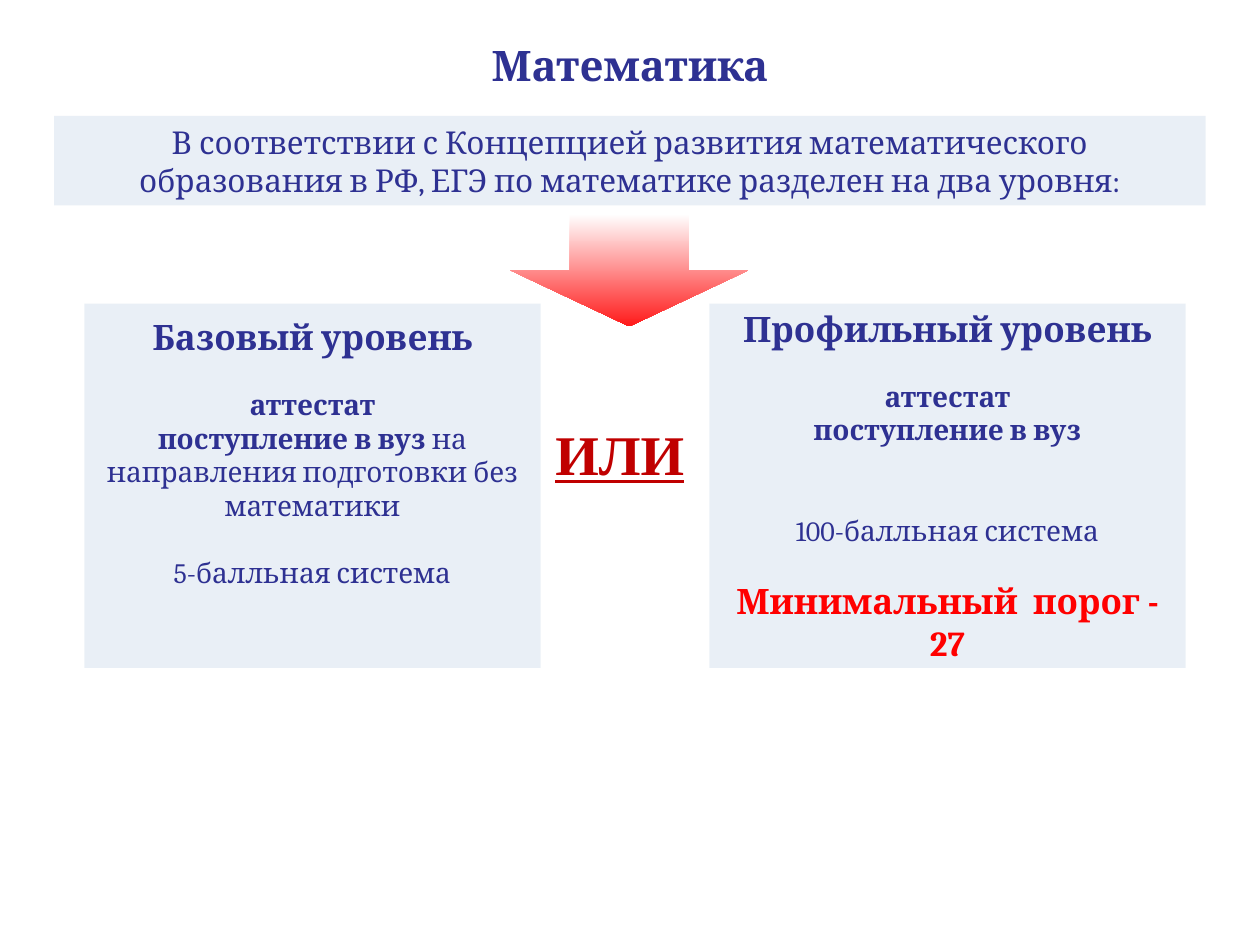
from dataclasses import dataclass
from lxml import etree
from pptx import Presentation
from pptx.dml.color import RGBColor as RGB
from pptx.enum.shapes import MSO_SHAPE as SHAPE
from pptx.enum.text import MSO_ANCHOR as ANCHOR, MSO_AUTO_SIZE as AUTO, PP_ALIGN as ALIGN
from pptx.oxml import parse_xml
from pptx.oxml.ns import nsdecls, qn
from pptx.util import Inches, Pt


@dataclass(frozen=True)
class Theme:
    serif: str = "Cambria"
    accent_font: str = "Times New Roman"
    navy: RGB = RGB.from_string("2E3192")
    panel: RGB = RGB.from_string("B9CDE5")
    white: RGB = RGB.from_string("FFFFFF")
    red: RGB = RGB.from_string("FF0000")
    arrow_red: RGB = RGB.from_string("FF1A1A")
    dark_red: RGB = RGB.from_string("C00000")
    panel_alpha: int = 31
    title: int = 24
    heading: int = 20
    intro: int = 18
    body: int = 16
    choice: int = 32


T = Theme()


@dataclass(frozen=True)
class Line:
    text: str
    size: int = T.body
    bold: bool = False
    color: RGB = T.navy
    font: str = T.serif
    before: int = 0
    plain_tail: str = ""


def write_lines(tf, lines):
    tf.word_wrap = True
    for i, line in enumerate(lines):
        p = tf.paragraphs[0] if i == 0 else tf.add_paragraph()
        p.alignment = ALIGN.CENTER
        if line.before:
            p.space_before = Pt(line.before)
        font = p.font
        font.name, font.size, font.bold = line.font, Pt(line.size), line.bold
        font.color.rgb = line.color
        p.add_run().text = line.text
        if line.plain_tail:
            r = p.add_run()
            r.text = line.plain_tail
            r.font.bold = False


def add_title(slide, text, left, top, width, height):
    sp = slide.shapes.title
    sp.left, sp.top, sp.width, sp.height = map(Inches, (left, top, width, height))
    tf = sp.text_frame
    tf.auto_size = AUTO.NONE
    write_lines(tf, [Line(text, T.title, bold=True)])
    rPr = tf.paragraphs[0].runs[0].font._element
    rPr.append(parse_xml(
        f'<a:effectLst {nsdecls("a")}>'
        '<a:outerShdw blurRad="38100" dist="38100" dir="5400000">'
        '<a:srgbClr val="000000"><a:alpha val="43000"/></a:srgbClr>'
        '</a:outerShdw></a:effectLst>'))


def add_plain_shape(slide, kind, left, top, width, height):
    sp = slide.shapes.add_shape(kind, *map(Inches, (left, top, width, height)))
    sp.shadow.inherit = False
    sp.line.fill.background()
    return sp


def add_panel(slide, left, top, width, height, lines, bottom_inset=0.05):
    sp = add_plain_shape(slide, SHAPE.RECTANGLE, left, top, width, height)
    sp.fill.solid()
    sp.fill.fore_color.rgb = T.panel
    clr = sp._element.spPr.find(qn("a:solidFill"))[0]
    etree.SubElement(clr, qn("a:alpha")).set("val", str(T.panel_alpha * 1000))
    tf = sp.text_frame
    tf.vertical_anchor = ANCHOR.MIDDLE
    tf.margin_bottom = Inches(bottom_inset)
    write_lines(tf, lines)


def add_arrow(slide, left, top, width, height):
    sp = add_plain_shape(slide, SHAPE.DOWN_ARROW, left, top, width, height)
    sp.fill.gradient()
    sp.fill.gradient_angle = 270
    for stop, color in zip(sp.fill.gradient_stops, (T.white, T.arrow_red)):
        stop.color.rgb = color


def add_choice(slide, text, left, top, width, height):
    tf = slide.shapes.add_textbox(*map(Inches, (left, top, width, height))).text_frame
    write_lines(tf, [Line(text, T.choice, True, T.dark_red, T.accent_font)])
    tf.paragraphs[0].font.underline = True


def main():
    prs = Presentation()
    prs.slide_width, prs.slide_height = Inches(10), Inches(7.5)
    slide = prs.slides.add_slide(prs.slide_layouts[5])

    add_title(slide, "Математика", 0.43, 0.26, 9.14, 0.5)
    add_panel(slide, 0.67, 2.41, 3.62, 2.89, [
        Line("Базовый уровень", T.heading, bold=True),
        Line("аттестат", bold=True, before=17),
        Line("поступление в вуз ", bold=True,
             plain_tail="на направления подготовки без математики"),
        Line("5-балльная система", before=19),
    ], bottom_inset=0.58)
    add_panel(slide, 5.63, 2.41, 3.78, 2.89, [
        Line("Профильный уровень", T.heading, bold=True),
        Line("аттестат", bold=True, before=17),
        Line("поступление в вуз", bold=True),
        Line("100-балльная система", before=38),
        Line("Минимальный  порог - 27", T.heading, True, T.red, before=19),
    ])
    add_arrow(slide, 4.05, 1.7, 1.89, 0.89)
    add_panel(slide, 0.43, 0.92, 9.14, 0.71, [
        Line("В соответствии с Концепцией развития математического образования "
             "в РФ, ЕГЭ по математике разделен на два уровня:", T.intro),
    ])
    add_choice(slide, "ИЛИ", 4.29, 3.28, 1.26, 0.64)

    prs.save("out.pptx")


if __name__ == "__main__":
    main()
